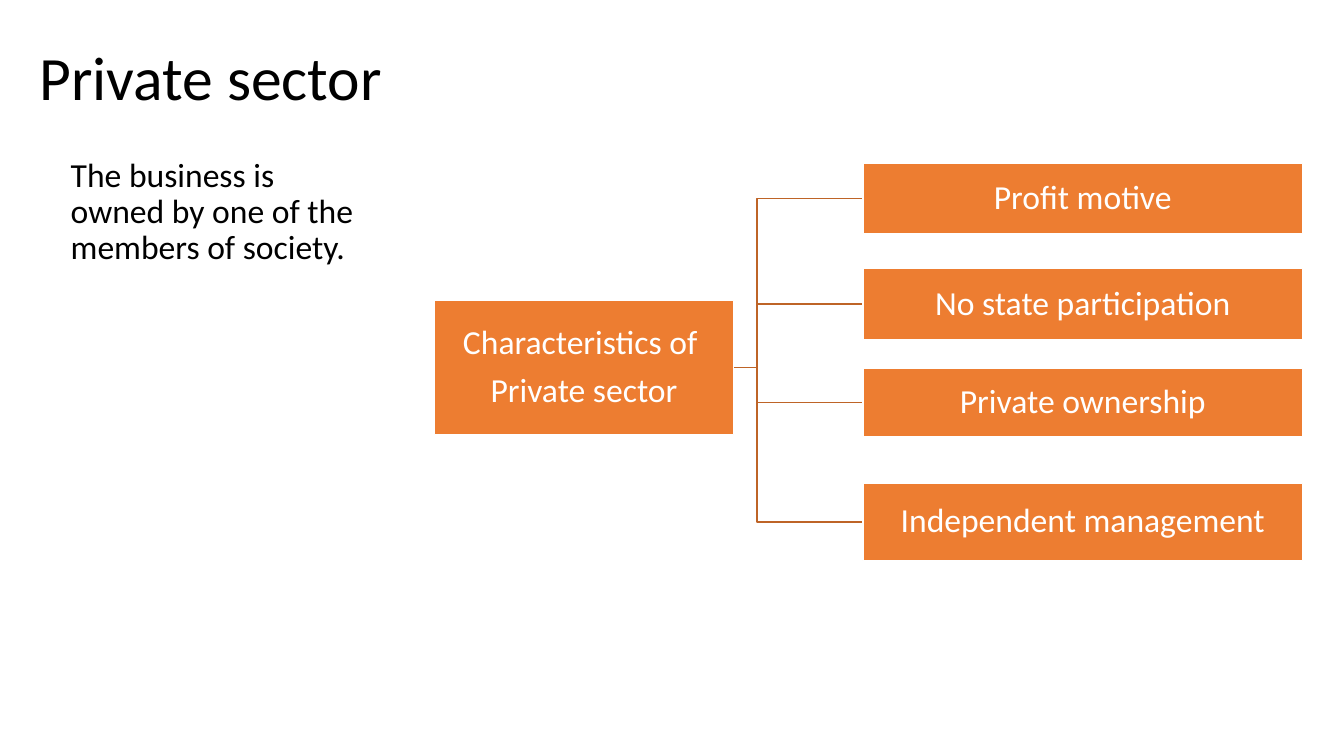
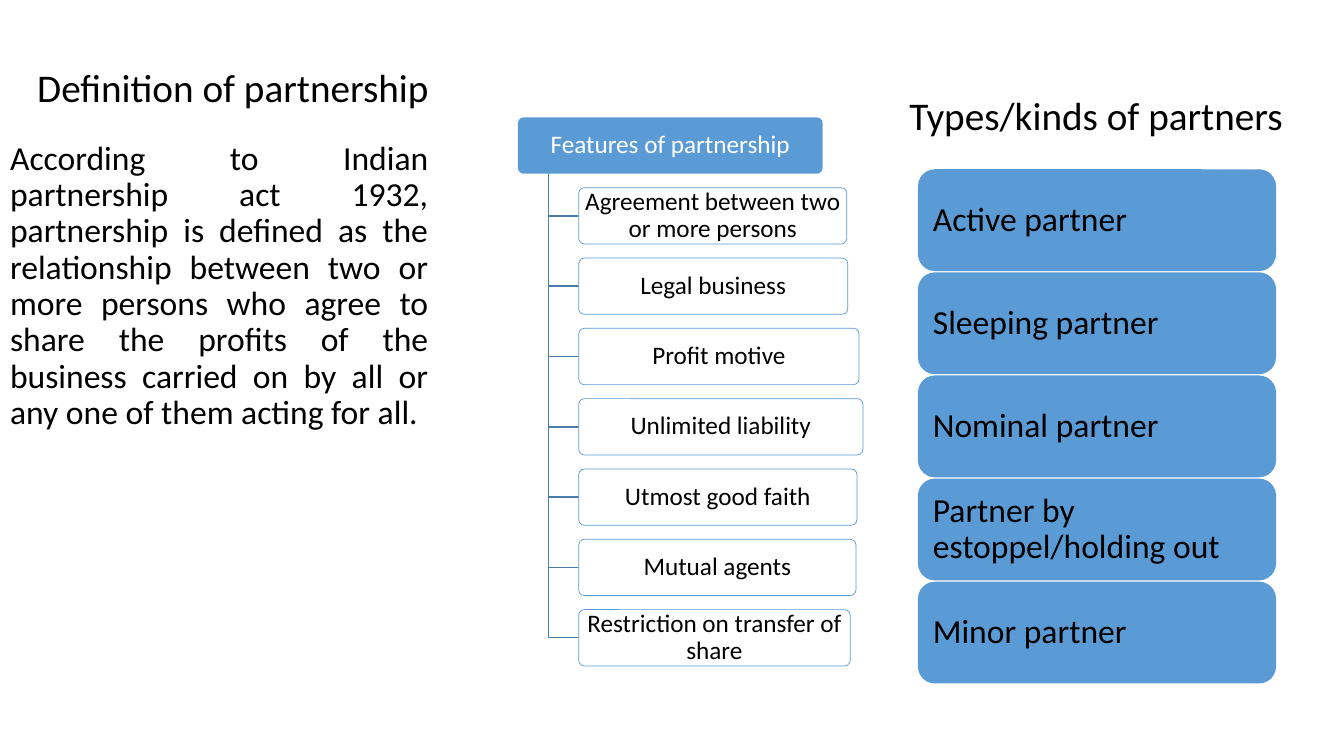
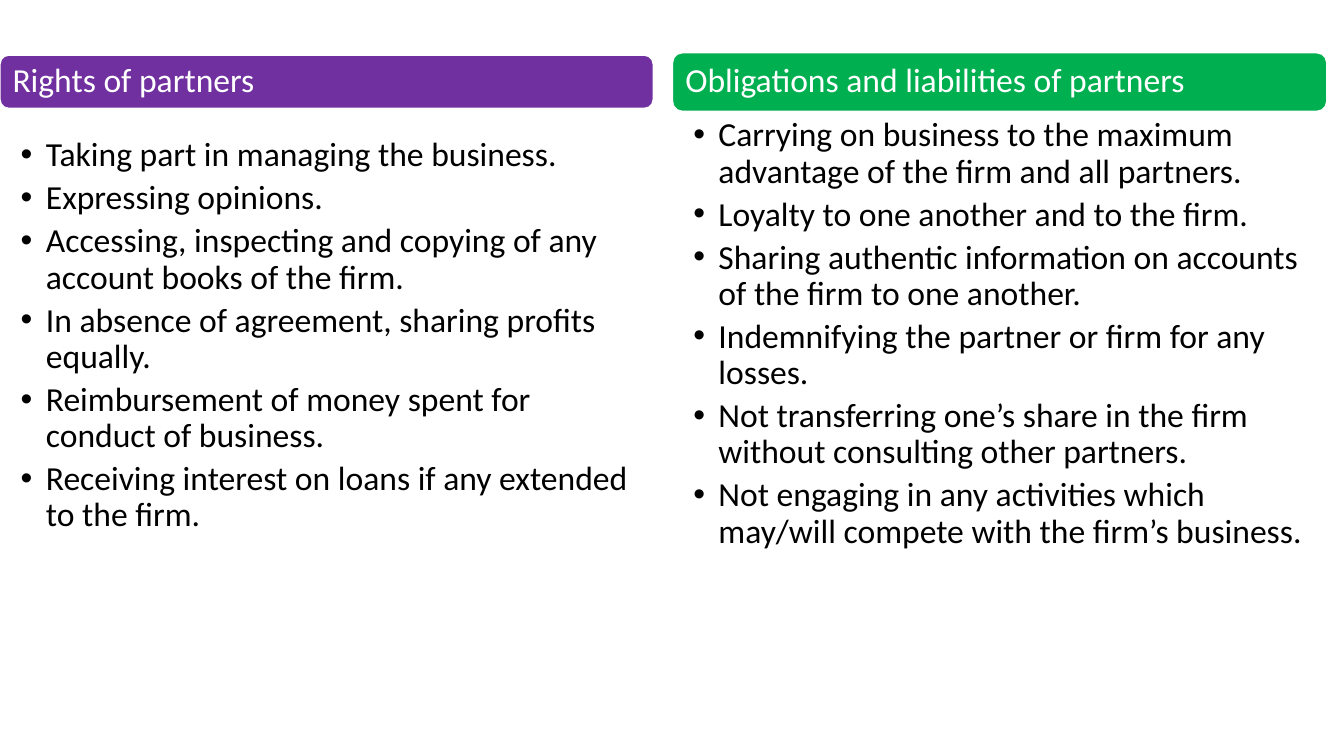
from dataclasses import dataclass
from typing import Any, Optional

import lxml.etree
import pptx
import pptx.dml.color
import pptx.enum.shapes
import pptx.enum.text
import pptx.oxml.ns
import pptx.util

Pt = pptx.util.Pt
RGBColor = pptx.dml.color.RGBColor
SHAPE = pptx.enum.shapes.MSO_SHAPE
ALIGN = pptx.enum.text.PP_ALIGN
ANCHOR = pptx.enum.text.MSO_ANCHOR

BLACK = RGBColor(0x00, 0x00, 0x00)
WHITE = RGBColor(0xFF, 0xFF, 0xFF)
ORANGE = RGBColor(0xED, 0x7D, 0x31)
DARK_ORANGE = RGBColor(0xBE, 0x64, 0x27)
BLUE = RGBColor(0x5B, 0x9B, 0xD5)
DARK_BLUE = RGBColor(0x49, 0x7C, 0xAB)
PURPLE = RGBColor(0x70, 0x30, 0xA0)
GREEN = RGBColor(0x00, 0xB0, 0x50)

FONT = "Calibri"
LINE_SPACING = 0.9
BULLET_INDENT = 18


@dataclass(frozen=True)
class Area:
    left: float
    top: float
    width: float
    height: float

    @property
    def bottom(self) -> float:
        return self.top + self.height

    @property
    def middle(self) -> float:
        return self.top + self.height / 2


@dataclass(frozen=True)
class TextStyle:
    size: float = 24
    color: RGBColor = BLACK
    align: Any = ALIGN.LEFT
    anchor: Any = ANCHOR.TOP
    insets: tuple[float, float, float, float] = (7.2, 3.6, 7.2, 3.6)
    space_after: float = 0
    bulleted: bool = False


@dataclass(frozen=True)
class BoxStyle:
    fill: RGBColor
    text: TextStyle
    outline: Optional[RGBColor] = None
    outline_width: float = 1
    preset: Any = SHAPE.ROUNDED_RECTANGLE
    corner: Optional[float] = None


@dataclass(frozen=True)
class Column:
    heading: str
    color: RGBColor
    heading_area: Area
    list_area: Area
    points: list[str]


CHARACTERISTIC = BoxStyle(
    ORANGE, TextStyle(24, WHITE, ALIGN.CENTER, ANCHOR.MIDDLE, (1.5,) * 4, 8.4),
    WHITE, preset=SHAPE.RECTANGLE)
FEATURE_INSETS = (2.7, 1.8, 2.7, 1.8)
FEATURE_ROOT = BoxStyle(
    BLUE, TextStyle(18, WHITE, ALIGN.CENTER, ANCHOR.MIDDLE, FEATURE_INSETS), corner=0.1)
FEATURE = BoxStyle(
    WHITE, TextStyle(18, BLACK, ALIGN.CENTER, ANCHOR.MIDDLE, FEATURE_INSETS),
    BLUE, 0.5, corner=0.1)
PARTNER = BoxStyle(BLUE, TextStyle(anchor=ANCHOR.MIDDLE, insets=(7.2,) * 4))
HEADING_TEXT = TextStyle(24, WHITE, anchor=ANCHOR.MIDDLE, insets=(7.2,) * 4)
LIST_TEXT = TextStyle(insets=(14.8, 2, 13.5, 2), space_after=4.8, bulleted=True)
MAIN_TITLE = TextStyle(44, anchor=ANCHOR.MIDDLE)
SECTION_TITLE = TextStyle(28, anchor=ANCHOR.MIDDLE)


def set_all(target: Any, **values: Any) -> None:
    for name, value in values.items():
        setattr(target, name, value)


def lengths(area: Area) -> list[int]:
    return [Pt(n) for n in (area.left, area.top, area.width, area.height)]


def set_bullet(paragraph: Any, bulleted: bool) -> None:
    properties = paragraph._p.get_or_add_pPr()
    indent = Pt(BULLET_INDENT) if bulleted else 0
    properties.set("marL", str(indent))
    properties.set("indent", str(-indent))
    tag = pptx.oxml.ns.qn("a:buChar" if bulleted else "a:buNone")
    bullet = lxml.etree.SubElement(properties, tag)
    if bulleted:
        bullet.set("char", "•")


def write(shape: Any, lines: list[str], style: TextStyle) -> None:
    frame = shape.text_frame
    left, top, right, bottom = (Pt(n) for n in style.insets)
    frame.text = "\n".join(lines)
    set_all(frame, word_wrap=True, auto_size=pptx.enum.text.MSO_AUTO_SIZE.NONE,
            vertical_anchor=style.anchor, margin_left=left, margin_top=top,
            margin_right=right, margin_bottom=bottom)
    for paragraph in frame.paragraphs:
        set_all(paragraph, alignment=style.align, line_spacing=LINE_SPACING,
                space_before=Pt(0), space_after=Pt(style.space_after))
        set_bullet(paragraph, style.bulleted)
        for run in paragraph.runs:
            set_all(run.font, name=FONT, size=Pt(style.size))
            run.font.color.rgb = style.color


def fill_placeholder(holder: Any, area: Area, lines: list[str], style: TextStyle) -> None:
    left, top, width, height = lengths(area)
    set_all(holder, left=left, top=top, width=width, height=height)
    write(holder, lines, style)


def add_box(slide: Any, area: Area, lines: list[str], style: BoxStyle) -> None:
    box = slide.shapes.add_shape(style.preset, *lengths(area))
    box.shadow.inherit = False
    box.fill.solid()
    box.fill.fore_color.rgb = style.fill
    if style.outline is None:
        box.line.fill.background()
    else:
        box.line.color.rgb = style.outline
        box.line.width = Pt(style.outline_width)
    if style.corner is not None:
        box.adjustments[0] = style.corner
    write(box, lines, style.text)


def add_branch(slide: Any, points: list[tuple[float, float]], color: RGBColor) -> None:
    """Draw an open, unfilled line with corners through the points."""
    start, *bends = [(Pt(x), Pt(y)) for x, y in points]
    builder = slide.shapes.build_freeform(*start)
    builder.add_line_segments(bends, close=False)
    branch = builder.convert_to_shape()
    branch.shadow.inherit = False
    branch.fill.background()
    branch.line.color.rgb = color
    branch.line.width = Pt(1)


def add_titled_slide(deck: Any, title: str, title_area: Area, title_style: TextStyle,
                     body: str, body_area: Area, body_style: TextStyle) -> Any:
    slide = deck.slides.add_slide(deck.slide_layouts[1])
    fill_placeholder(slide.shapes.title, title_area, [title], title_style)
    fill_placeholder(slide.placeholders[1], body_area, [body], body_style)
    return slide


def build_private_sector(deck: Any) -> None:
    slide = add_titled_slide(
        deck, "Private sector", Area(20.9, 5, 260.6, 104.4), MAIN_TITLE,
        "The business is owned by one of the members of society.",
        Area(43.3, 109.4, 217.4, 106.6), TextStyle())
    root = Area(310.4, 214.6, 213.5, 95.8)
    rows = [
        ("Profit motive", 116.7, 50.2),
        ("No state participation", 191.7, 51),
        ("Private ownership", 263.3, 48.4),
        ("Independent management", 345.2, 55.4),
    ]
    boxes = [(label, Area(616.4, top, 314, height)) for label, top, height in rows]
    branch_start, trunk = 465.1, 540.7
    for _, area in reversed(boxes):
        add_branch(slide, [(branch_start, root.middle), (trunk, root.middle),
                           (trunk, area.middle), (area.left, area.middle)], DARK_ORANGE)
    add_box(slide, root, ["Characteristics of ", "Private sector"], CHARACTERISTIC)
    for label, area in boxes:
        add_box(slide, area, [label], CHARACTERISTIC)


def build_partnership(deck: Any) -> None:
    slide = add_titled_slide(
        deck, "Definition of partnership", Area(19.4, 31.7, 321.8, 65.5), SECTION_TITLE,
        "According to Indian partnership act 1932, partnership is defined as the "
        "relationship between two or more persons who agree to share the profits of the "
        "business carried on by all or any one of them acting for all.",
        Area(0, 97.4, 313.2, 249.8), TextStyle(align=ALIGN.JUSTIFY))

    root = Area(370, 83.9, 217.6, 40.2)
    add_box(slide, root, ["Features of partnership"], FEATURE_ROOT)
    features = [
        ("Agreement between two or more persons", 191.5),
        ("Legal business", 192.2),
        ("Profit motive", 200.2),
        ("Unlimited liability", 203),
        ("Utmost good faith", 198.7),
        ("Mutual agents", 198),
        ("Restriction on transfer of share", 193.9),
    ]
    trunk = 391.8
    for row, (label, width) in enumerate(features):
        area = Area(413.4, 134.1 + 50.23 * row, width, 40.2)
        add_branch(slide, [(trunk, root.bottom), (trunk, area.middle),
                           (area.left, area.middle)], DARK_BLUE)
        add_box(slide, area, [label], FEATURE)

    partners_title = slide.shapes.add_textbox(*lengths(Area(642.4, 70.6, 317.5, 27.4)))
    write(partners_title, ["Types/kinds of partners"], SECTION_TITLE)
    partners = ["Active partner", "Sleeping partner", "Nominal partner",
                "Partner by estoppel/holding out", "Minor partner"]
    for row, partner in enumerate(partners):
        add_box(slide, Area(655.7, 120.9 + 73.65 * row, 255.8, 72.7), [partner], PARTNER)


def build_rights_and_obligations(deck: Any) -> None:
    slide = deck.slides.add_slide(deck.slide_layouts[3])
    title = slide.shapes.title._element
    title.getparent().remove(title)
    columns = [
        Column("Rights of partners", PURPLE,
               Area(0, 39.4, 466.6, 38), Area(0, 96.5, 466.6, 302.4), [
                   "Taking part in managing the business.",
                   "Expressing opinions.",
                   "Accessing, inspecting and copying of any account books of the firm.",
                   "In absence of agreement, sharing profits equally.",
                   "Reimbursement of money spent for conduct of business.",
                   "Receiving interest on loans if any extended to the firm."]),
        Column("Obligations and liabilities of partners", GREEN,
               Area(480.4, 37.7, 467.3, 41.8), Area(480.4, 82.1, 467.3, 328.3), [
                   "Carrying on business to the maximum advantage of the firm and all partners.",
                   "Loyalty to one another and to the firm.",
                   "Sharing authentic information on accounts of the firm to one another.",
                   "Indemnifying the partner or firm for any losses.",
                   "Not transferring one’s share in the firm without consulting other partners.",
                   "Not engaging in any activities which may/will compete with the firm’s "
                   "business."]),
    ]
    for index, column in enumerate(columns, start=1):
        add_box(slide, column.heading_area, [column.heading],
                BoxStyle(column.color, HEADING_TEXT, WHITE))
        fill_placeholder(slide.placeholders[index], column.list_area,
                         column.points, LIST_TEXT)


def main() -> None:
    deck = pptx.Presentation()
    set_all(deck, slide_width=Pt(960), slide_height=Pt(540))
    build_private_sector(deck)
    build_partnership(deck)
    build_rights_and_obligations(deck)
    deck.save("out.pptx")


if __name__ == "__main__":
    main()
